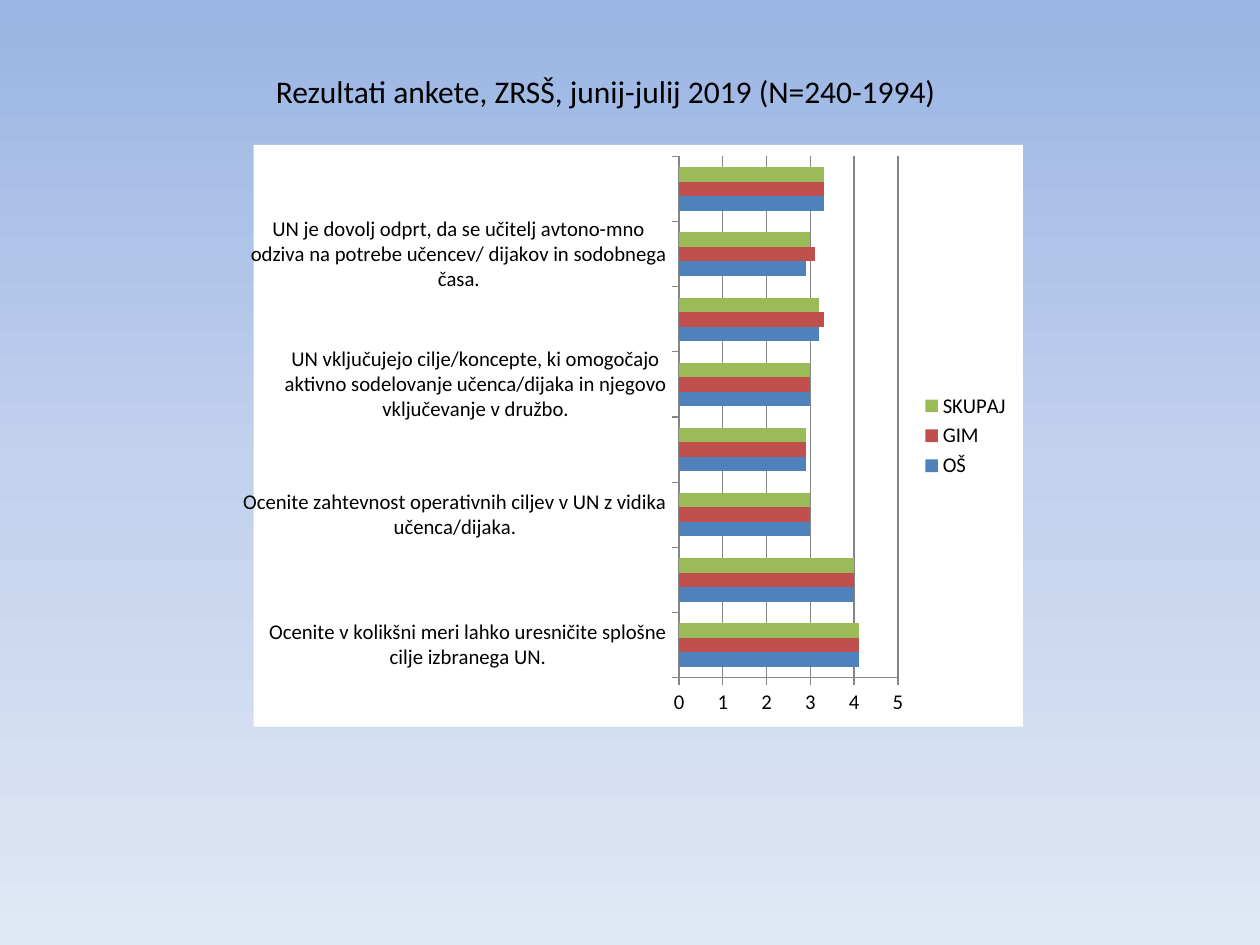
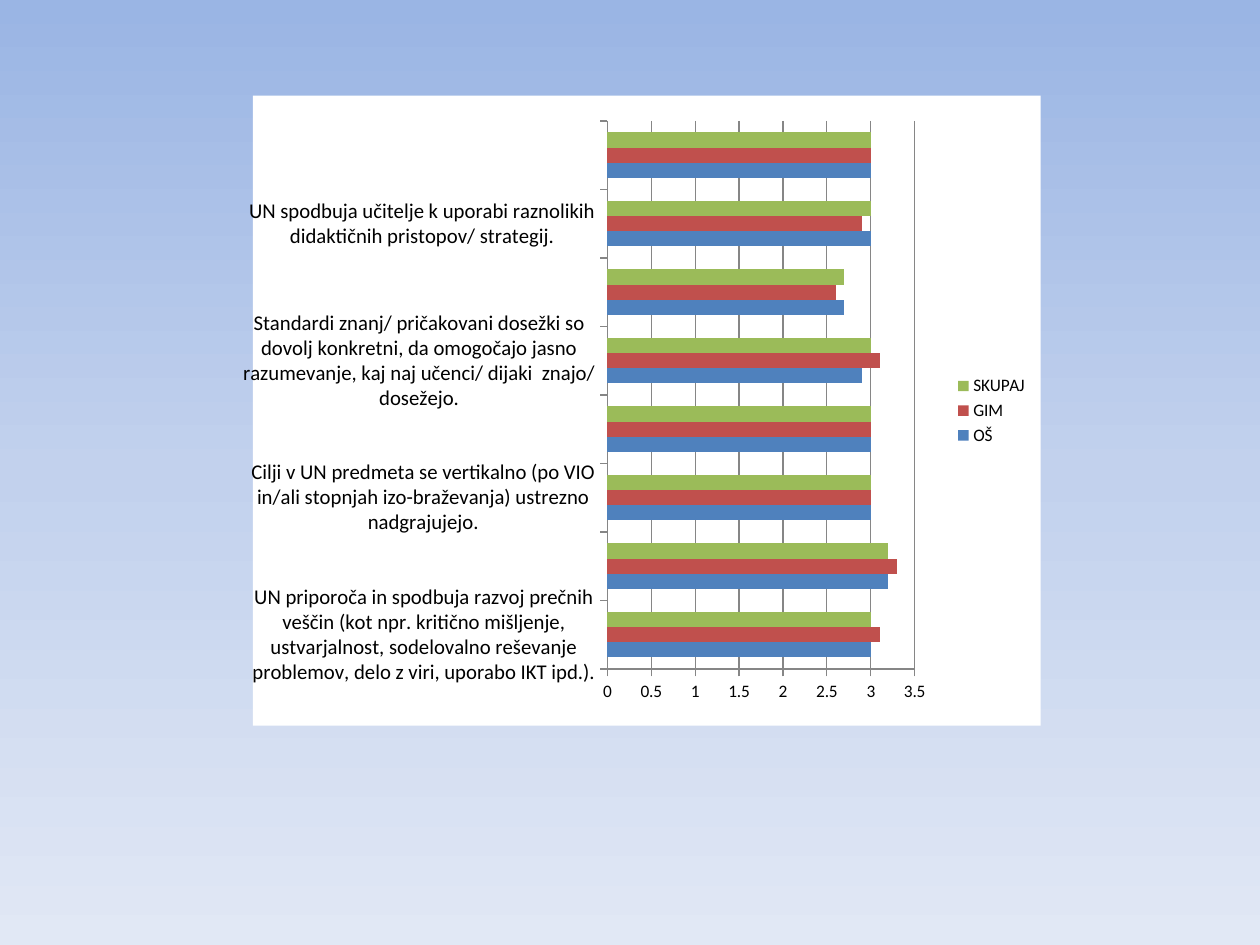
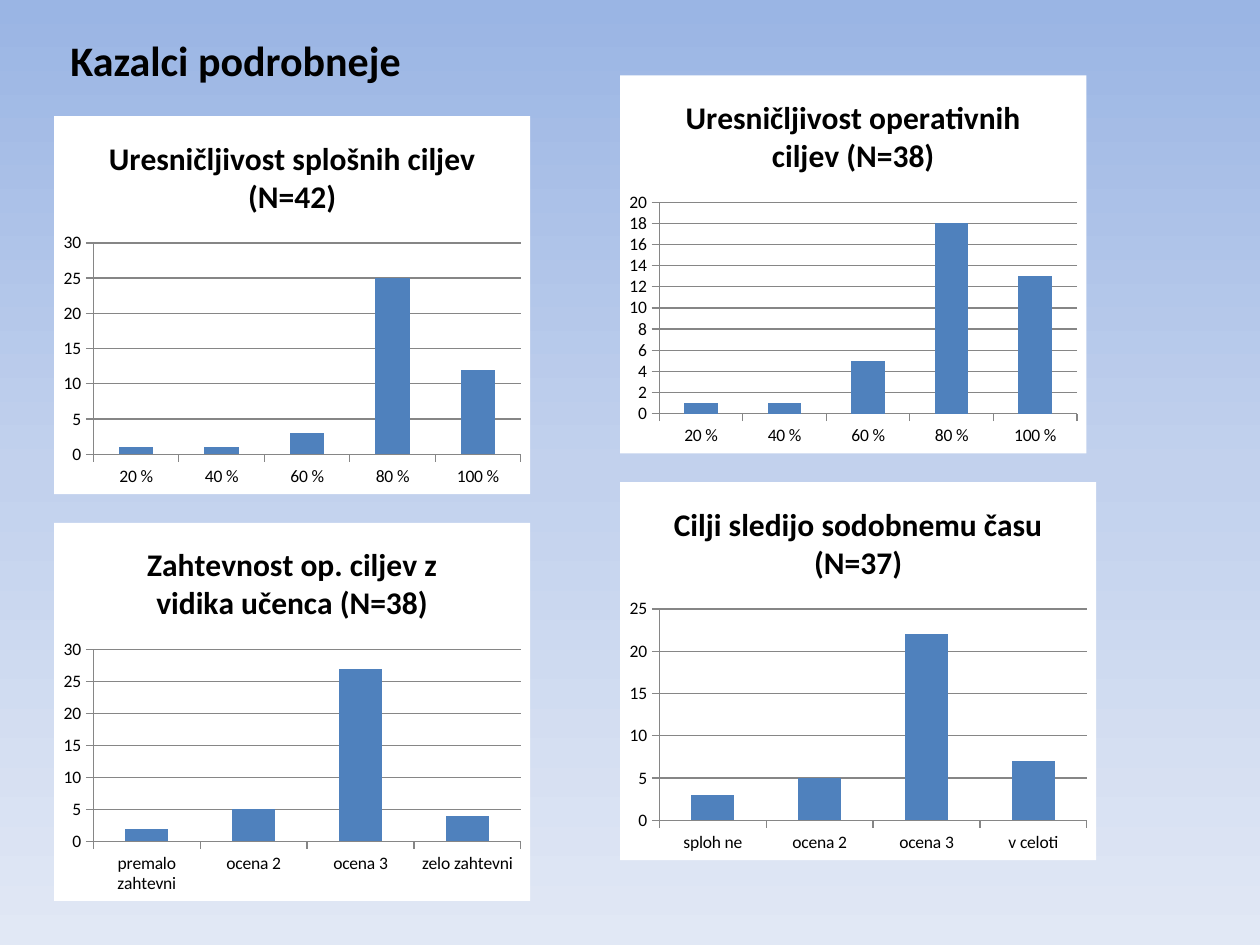
from copy import deepcopy
from dataclasses import dataclass

from lxml.etree import SubElement
from pptx import Presentation
from pptx.chart.data import CategoryChartData
from pptx.dml.color import RGBColor
from pptx.enum.chart import XL_CHART_TYPE, XL_LEGEND_POSITION
from pptx.enum.text import MSO_AUTO_SIZE
from pptx.oxml import parse_xml
from pptx.oxml.ns import nsdecls, qn
from pptx.util import Cm, Pt


@dataclass(frozen=True)
class Theme:
    font: str = "Calibri"
    ink: str = "000000"
    grid: str = "868686"
    panel: str = "FFFFFF"
    sky: tuple = ("9AB5E4", "C2D1ED", "E1E8F5")
    bars: tuple = ("4F81BD", "C0504D", "9BBB59")
    head: int = 24
    title: int = 18
    label: int = 12
    small: int = 10


@dataclass(frozen=True)
class Box:
    left: float
    top: float
    width: float
    height: float

    def inner(self, x, y, width, height):
        return Box(self.left + x, self.top + y, width, height)

    def cm(self):
        return [Cm(n) for n in (self.left, self.top, self.width, self.height)]


THEME = Theme()
PAGE = Box(0, 0, 25.4, 19.05)
GROUPS = ("OŠ", "GIM", "SKUPAJ")

# Survey statements with the mean score of each group
GOALS = [
    ("Ocenite v kolikšni meri lahko uresničite splošne cilje izbranega UN.", 4.1, 4.1, 4.1),
    ("Ocenite v kolikšni meri lahko uresničite (operativne) cilje iz izbranega UN.", 4, 4, 4),
    ("Ocenite zahtevnost operativnih ciljev v UN z vidika učenca/dijaka.", 3, 3, 3),
    ("Operativni cilji v UN sledijo potrebam sodobnega časa.", 2.9, 2.9, 2.9),
    ("UN vključujejo cilje/koncepte, ki omogočajo aktivno sodelovanje učenca/dijaka "
     "in njegovo vključevanje v družbo.", 3, 3, 3),
    ("V UN so ustrezno zastopani cilji vseh taksono-mskih ravni.", 3.2, 3.3, 3.2),
    ("UN je dovolj odprt, da se učitelj avtono-mno odziva na potrebe učencev/ dijakov "
     "in sodobnega časa.", 2.9, 3.1, 3),
    ("Uresničevanje ciljev omogoča pridobivanje ustreznega znanja in zmožnosti "
     "za nadaljnje izo-braževanje.", 3.3, 3.3, 3.3),
]
SKILLS = [
    ("UN priporoča in spodbuja razvoj prečnih veščin (kot npr. kritično mišljenje, "
     "ustvarjalnost, sodelovalno reševanje problemov, delo z viri, uporabo IKT ipd.).",
     3, 3.1, 3),
    ("UN omogoča med-predmetno povezovanje pri pouku.", 3.2, 3.3, 3.2),
    ("Cilji v UN predmeta se vertikalno (po VIO in/ali stopnjah izo-braževanja) "
     "ustrezno nadgrajujejo.", 3, 3, 3),
    ("S (predlaganimi) vsebinami v UN lahko uresničujem specifične cilje.", 3, 3, 3),
    ("Standardi znanj/ pričakovani dosežki so dovolj konkretni, da omogočajo jasno "
     "razumevanje, kaj naj učenci/ dijaki  znajo/ dosežejo.", 2.9, 3.1, 3),
    ("UN usmerja učitelje v uporabo sodobnih didaktičnih načel/ usmeritev/ konceptov "
     "(npr. formati-vno spremljanje, personaliz", 2.7, 2.6, 2.7),
    ("UN spodbuja učitelje k uporabi raznolikih didaktičnih pristopov/ strategij.",
     3, 2.9, 3),
    ("Didaktična priporočila so zapisana jasno in dovolj konkretno.", 3, 3, 3),
]

# Single indicators: title, labels, counts, panel width
SHARES = ("20 %", "40 %", "60 %", "80 %", "100 %")
COUNTS = [
    ("Uresničljivost splošnih ciljev (N=42)", SHARES, (1, 1, 3, 25, 12), 9.6),
    ("Uresničljivost operativnih ciljev (N=38)", SHARES, (1, 1, 5, 18, 13), 9.4),
    ("Zahtevnost op. ciljev z vidika učenca (N=38)",
     ("premalo zahtevni", "ocena 2", "ocena 3", "zelo zahtevni"), (2, 5, 27, 4), 9.6),
    ("Cilji sledijo sodobnemu času (N=37)",
     ("sploh ne", "ocena 2", "ocena 3", "v celoti"), (3, 5, 22, 7), 9.6),
]


def style(font, size, bold=False):
    font.name, font.size, font.bold = THEME.font, Pt(size), bold
    font.color.rgb = RGBColor.from_string(THEME.ink)


def sky(master):
    """Shared background: a vertical three-stop gradient."""
    fill = master.background.fill
    fill.gradient()
    fill.gradient_angle = 270
    stops = master.element.find(".//" + qn("a:gsLst"))
    for extra in list(stops)[2:]:
        stops.remove(extra)
    stops.append(deepcopy(stops[-1]))
    for stop, color, spot in zip(fill.gradient_stops, THEME.sky, (0, 0.5, 1)):
        stop.color.rgb = RGBColor.from_string(color)
        stop.position = spot


def heading(slide, box, text, size, bold=False):
    frame = slide.shapes.add_textbox(*box.cm()).text_frame
    frame.word_wrap = False
    frame.auto_size = MSO_AUTO_SIZE.SHAPE_TO_FIT_TEXT
    frame.text = text
    style(frame.paragraphs[0].runs[0].font, size, bold)


def panel(slide, box, kind, labels, series, size):
    """White panel with a clustered chart."""
    data = CategoryChartData()
    data.categories = labels
    for name, values in series:
        data.add_series(name, values)
    chart = slide.shapes.add_chart(kind, *box.cm(), data).chart
    style(chart.font, size)
    chart.has_legend = chart.has_title = False
    chart.element.find(qn("c:chart")).addnext(parse_xml(
        f'<c:spPr {nsdecls("c", "a")}><a:solidFill><a:srgbClr val="{THEME.panel}"/>'
        "</a:solidFill><a:ln><a:noFill/></a:ln></c:spPr>"))

    # Bars
    plot = chart.plots[0]
    plot.gap_width, plot.overlap, plot.vary_by_categories = 150, 0, False
    for bars, color in zip(plot.series, THEME.bars):
        bars.format.fill.solid()
        bars.format.fill.fore_color.rgb = RGBColor.from_string(color)

    # Axes and grid
    chart.value_axis.has_major_gridlines = True
    for part in (chart.category_axis, chart.value_axis, chart.value_axis.major_gridlines):
        part.format.line.width = Pt(0.75)
        part.format.line.color.rgb = RGBColor.from_string(THEME.grid)
    return chart


def place(chart, *rect):
    """Fix the inner plot area as fractions of the panel."""
    area = chart.element.find(".//" + qn("c:plotArea"))
    old = area.find(qn("c:layout"))
    if old is not None:
        area.remove(old)
    layout = parse_xml(f'<c:layout {nsdecls("c")}><c:manualLayout/></c:layout>')
    area.insert(0, layout)
    pairs = [("layoutTarget", "inner"), ("xMode", "edge"), ("yMode", "edge")]
    for tag, value in pairs + list(zip("xywh", rect)):
        SubElement(layout[0], qn("c:" + tag)).set("val", str(value))


def survey(slide, box, rows, size):
    """Bar chart of mean scores by group."""
    labels, *scores = zip(*rows)
    chart = panel(slide, box, XL_CHART_TYPE.BAR_CLUSTERED, labels,
                  zip(GROUPS, scores), size)
    chart.has_legend = True
    chart.legend.position = XL_LEGEND_POSITION.RIGHT
    chart.legend.include_in_layout = False
    style(chart.category_axis.tick_labels.font, THEME.label)
    return chart


def goals(slide, box):
    heading(slide, box.inner(5.31, 1.32, 13.89, 1.02),
            "Rezultati ankete, ZRSŠ, junij-julij 2019 (N=240-1994)", THEME.title)
    survey(slide, box.inner(4.9, 2.92, 15.72, 11.73), GOALS, THEME.label)


def skills(slide, box):
    chart = survey(slide, box.inner(4.9, 1.93, 16.08, 12.7), SKILLS, THEME.small)
    place(chart, 0.45, 0.04, 0.39, 0.87)


def details(slide, box):
    """Two staggered columns of column charts."""
    starts, step = ((1.09, 2.34), (12.5, 1.52)), 8.2
    for i, (title, labels, counts, width) in enumerate(COUNTS):
        row, col = divmod(i, 2)
        left, top = starts[col]
        chart = panel(slide, box.inner(left, top + row * step, width, 7.62),
                      XL_CHART_TYPE.COLUMN_CLUSTERED, labels,
                      [("Series 1", counts)], THEME.small)
        frame = chart.chart_title.text_frame
        frame.text = title
        style(frame.paragraphs[0].runs[0].font, THEME.title, True)
    heading(slide, box.inner(1.17, 0.58, 7.24, 1.27), "Kazalci podrobneje",
            THEME.head, True)


def main():
    deck = Presentation()
    deck.slide_width, deck.slide_height = Cm(PAGE.width), Cm(PAGE.height)
    sky(deck.slide_master)
    for build in (goals, skills, details):
        build(deck.slides.add_slide(deck.slide_layouts[6]), PAGE)
    deck.save("out.pptx")


if __name__ == "__main__":
    main()
